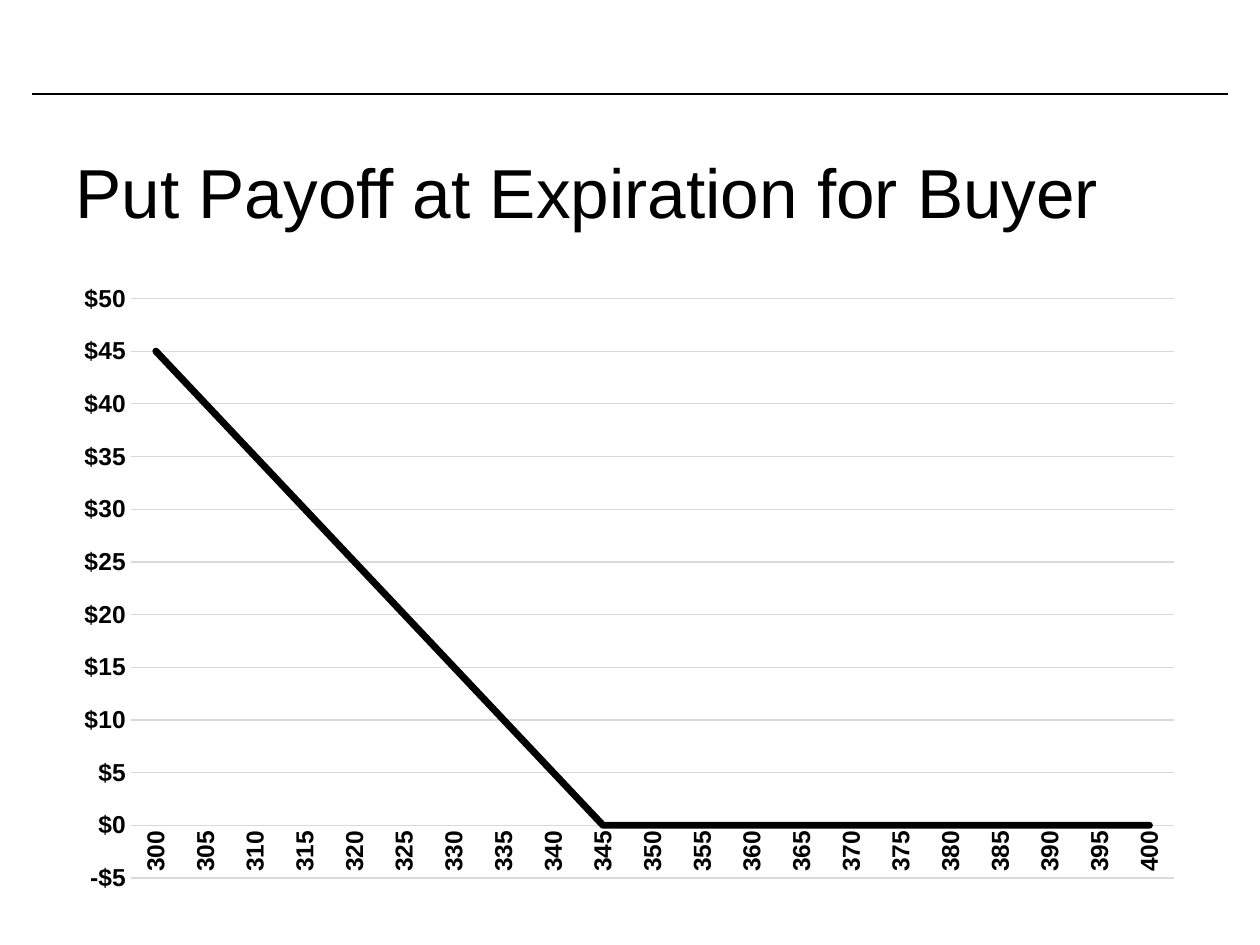
from lxml import etree
from pptx import Presentation
from pptx.chart.data import CategoryChartData
from pptx.dml.color import RGBColor
from pptx.enum import chart as ch, shapes, text
from pptx.oxml import parse_xml
from pptx.oxml.ns import nsdecls, qn
from pptx.util import Cm, Pt

# Content
TITLE = "Put Payoff at Expiration for Buyer"
STRIKE = 345
PRICES = range(300, 401, 5)
PAYOFFS = [max(STRIKE - price, 0) for price in PRICES]
DOLLARS = '"$"#,##0'
FONT, BLACK, GREY = "Arial", "000000", "D9D9D9"
PLOT = {"x": 0.06, "y": 0.04, "w": 0.92, "h": 0.92}


def color(value):
    return RGBColor.from_string(value)


def style_font(font, size, bold=False):
    font.name, font.size, font.bold = FONT, Pt(size), bold
    font.color.rgb = color(BLACK)


def add_text(tf, content, size, bold=False):
    p = tf.paragraphs[0]
    p.alignment = text.PP_ALIGN.LEFT
    r = p.add_run()
    r.text = content
    style_font(r.font, size, bold)


def style_line(line, value, width):
    line.color.rgb = color(value)
    line.width = Pt(width)


prs = Presentation()
prs.slide_width, prs.slide_height = Cm(25.4), Cm(19.05)
s = prs.slides.add_slide(prs.slide_layouts[5])

# Rule across the top
rule = s.shapes.add_connector(
    shapes.MSO_CONNECTOR.STRAIGHT, Cm(0.64), Cm(1.9), Cm(24.76), Cm(1.9))
style_line(rule.line, BLACK, 1)
etree.SubElement(rule._element.spPr, qn("a:effectLst"))

# Title
title = s.shapes.title
title.left, title.top, title.width, title.height = Cm(1.27), Cm(2.74), Cm(22.86), Cm(2.74)
tf = title.text_frame
tf.word_wrap = True
tf.auto_size = text.MSO_AUTO_SIZE.NONE
tf.vertical_anchor = text.MSO_ANCHOR.TOP
tf.margin_top = Cm(0.26)
add_text(tf, TITLE, 39.6)

# Payoff chart
data = CategoryChartData(number_format=DOLLARS)
data.categories = [str(price) for price in PRICES]
data.add_series("Series 1", PAYOFFS)
chart = s.shapes.add_chart(
    ch.XL_CHART_TYPE.LINE, Cm(1.27), Cm(5.51), Cm(22.86), Cm(12.7), data).chart
chart.has_legend = chart.has_title = False
style_font(chart.font, 14, True)

payoff = chart.plots[0].series[0]
payoff.smooth = False
payoff.marker.style = ch.XL_MARKER_STYLE.NONE
style_line(payoff.format.line, BLACK, 4)
ln = payoff.format.line._get_or_add_ln()
ln.set("cap", "rnd")
etree.SubElement(ln, qn("a:round"))

# Axes
cat, val = chart.category_axis, chart.value_axis
for axis in (cat, val):
    axis.major_tick_mark = axis.minor_tick_mark = ch.XL_TICK_MARK.NONE
    axis.tick_labels.number_format = DOLLARS
    axis.tick_labels.number_format_is_linked = False
    style_font(axis.tick_labels.font, 14, True)
style_line(cat.format.line, GREY, 0.75)
body = cat._element.find(qn("c:txPr")).find(qn("a:bodyPr"))
body.set("rot", "-5400000")
body.set("vert", "horz")
val.minimum_scale, val.maximum_scale, val.major_unit = -5, 50, 5
val.format.line.fill.background()
val.has_major_gridlines = True
style_line(val.major_gridlines.format.line, GREY, 0.75)

# Fixed inner plot area
area = chart._chartSpace.chart.plotArea
for old in area.findall(qn("c:layout")):
    area.remove(old)
places = "".join(f'<c:{key} val="{value}"/>' for key, value in PLOT.items())
area.insert(0, parse_xml(
    f'<c:layout {nsdecls("c")}><c:manualLayout><c:layoutTarget val="inner"/>'
    f'<c:xMode val="edge"/><c:yMode val="edge"/>{places}</c:manualLayout></c:layout>'))

prs.save("out.pptx")
